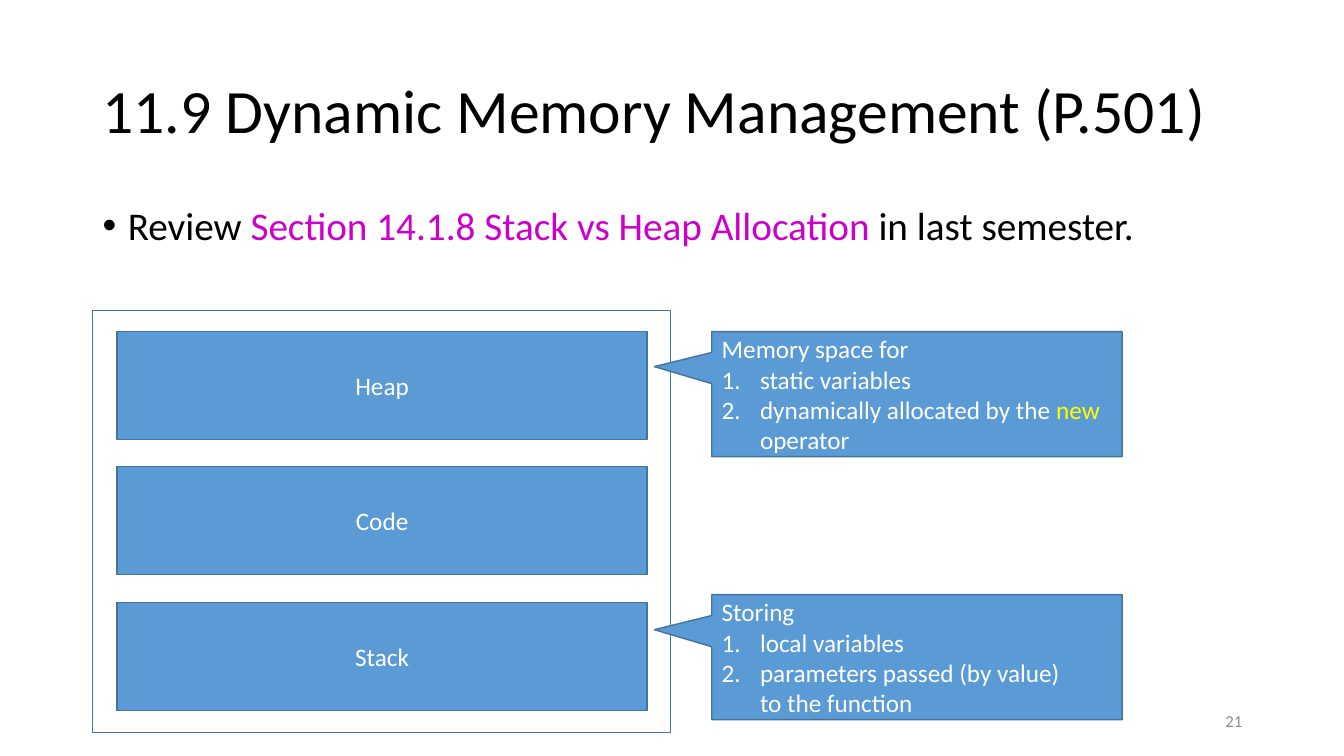
from lxml import etree
from pptx import Presentation
from pptx.dml.color import RGBColor
from pptx.enum.shapes import MSO_SHAPE
from pptx.enum.text import MSO_ANCHOR, PP_ALIGN
from pptx.oxml.ns import qn
from pptx.util import Pt

PX = 9144  # 100 px to the inch
RECT = MSO_SHAPE.RECTANGLE
CALL = MSO_SHAPE.RECTANGULAR_CALLOUT
MID = MSO_ANCHOR.MIDDLE
LEFT, MIDDLE, RIGHT = PP_ALIGN.LEFT, PP_ALIGN.CENTER, PP_ALIGN.RIGHT
BLUE, EDGE, WHITE, BLACK = "5B9BD5", "43739E", "FFFFFF", "000000"

deck = Presentation()
deck.slide_width, deck.slide_height = 1333 * PX, 750 * PX
slide = deck.slides.add_slide(deck.slide_layouts[6])


def write(para, parts, size, align=LEFT, mark=None, indent=0):
    """Fill a paragraph with (text, colour) parts and an optional bullet."""
    para.text = parts[0][0]
    for text, _ in parts[1:]:
        para.add_run().text = text
    para.alignment = align
    tones = [tone for _, tone in parts]
    for i, run in enumerate(para.runs):
        run.font.name, run.font.size = "Calibri", Pt(size)
        run.font.color.rgb = RGBColor.from_string(tones[min(i, len(tones) - 1)])
    if mark:
        props = para._p.get_or_add_pPr()
        props.set("marL", str(indent * PX))
        props.set("indent", str(-indent * PX))
        if mark == "1.":
            etree.SubElement(props, qn("a:buFont"), typeface="+mj-lt")
            etree.SubElement(props, qn("a:buAutoNum"), type="arabicPeriod")
        else:
            etree.SubElement(props, qn("a:buFont"), typeface="Arial")
            etree.SubElement(props, qn("a:buChar"), char=mark)


def draw(kind, x, y, w, h, fill=BLUE):
    shape = slide.shapes.add_shape(kind, x * PX, y * PX, w * PX, h * PX)
    shape.shadow.inherit = False
    if fill:
        shape.fill.solid()
        shape.fill.fore_color.rgb = RGBColor.from_string(fill)
    else:
        shape.fill.background()
    shape.line.color.rgb = RGBColor.from_string(EDGE)
    shape.line.width = Pt(1)
    shape.text_frame.vertical_anchor = MID
    return shape


# Title, review line and page number
review = [("Review ", BLACK), ("Section 14.1.8 Stack vs Heap Allocation", "CC00CC"),
          (" in last semester.", BLACK)]
title = [("11.9 Dynamic Memory Management (P.501)", BLACK)]
for x, y, w, h, parts, size, align, mark in (
        (92, 40, 1150, 145, title, 44, LEFT, None),
        (92, 200, 1150, 58, review, 28, LEFT, "•"),
        (942, 695, 300, 40, [("21", "8C8C8C")], 12, RIGHT, None)):
    frame = slide.shapes.add_textbox(x * PX, y * PX, w * PX, h * PX).text_frame
    frame.word_wrap = True
    if not mark:
        frame.vertical_anchor = MID
    para = frame.paragraphs[0]
    if align == LEFT:
        para.line_spacing = 0.9
    if mark:
        para.space_before = Pt(10)
    write(para, parts, size, align, mark, 25)

# Memory frame with its three areas
draw(RECT, 92, 308, 573, 419, None)
for i, name in enumerate(("Heap", "Code", "Stack")):
    area = draw(RECT, 116, 329 + round(134.5 * i), 526, 107)
    write(area.text_frame.paragraphs[0], [(name, WHITE)], 18, MIDDLE)

# Callouts with numbered lists
heap = [[("static variables", WHITE)],
        [("dynamically allocated by the ", WHITE), ("new", "FFFF00"),
         (" operator", WHITE)]]
stack = [[("local variables", WHITE)],
         [("parameters passed (by value)\nto the function", WHITE)]]
for y, head, items in ((329, "Memory space for", heap), (590, "Storing", stack)):
    note = draw(CALL, 706, y, 407, 124)
    note.adjustments[0], note.adjustments[1] = -0.64, -0.22
    frame = note.text_frame
    write(frame.paragraphs[0], [(head, WHITE)], 18)
    for parts in items:
        write(frame.add_paragraph(), parts, 18, LEFT, "1.", 38)

deck.save("out.pptx")
